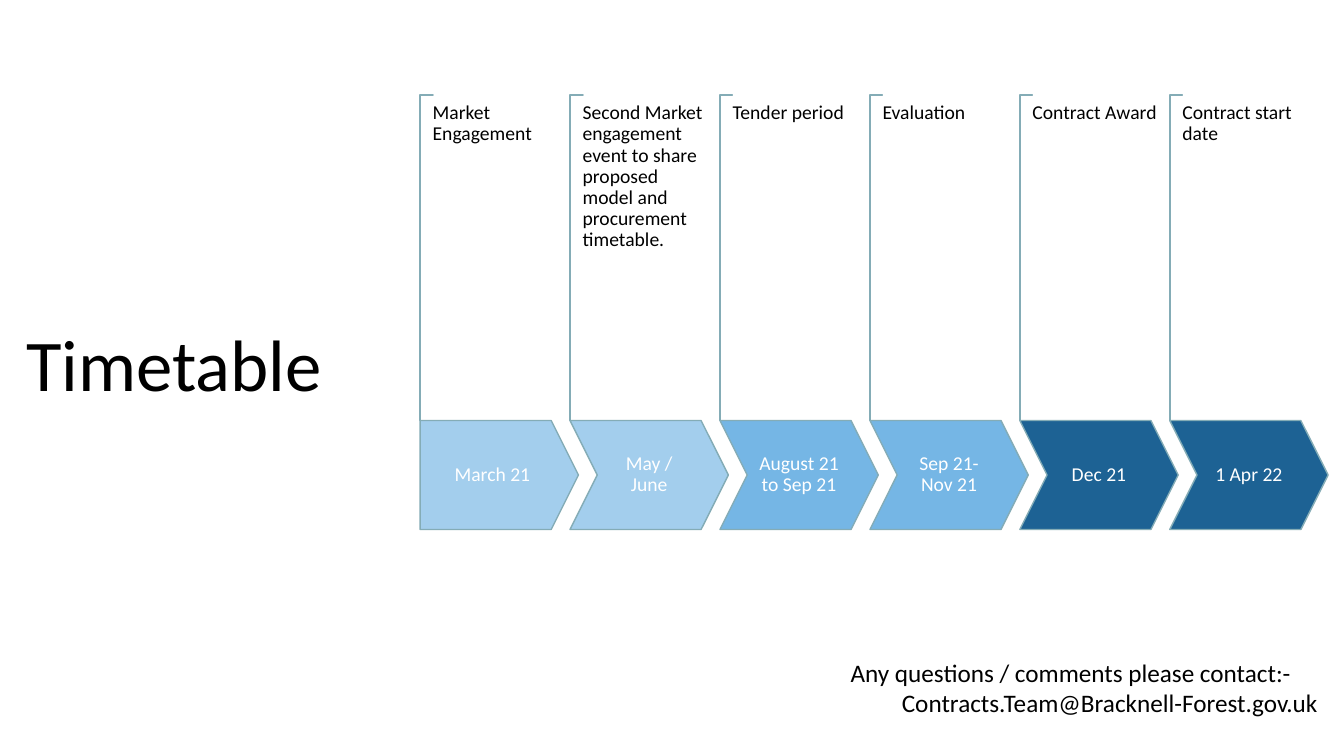
from pptx import Presentation
from pptx.dml.color import RGBColor
from pptx.enum import shapes, text
from pptx.util import Pt

BLACK = RGBColor(0x00, 0x00, 0x00)
WHITE = RGBColor(0xFF, 0xFF, 0xFF)
OUTLINE = RGBColor(0x84, 0xAC, 0xB6)
PALE = RGBColor(0xA3, 0xCE, 0xED)
MID = RGBColor(0x75, 0xB6, 0xE5)
DARK = RGBColor(0x1D, 0x62, 0x94)

FIRST_STAGE, STAGE_STEP = 300.1, 107.1
ARROW_TOP, ARROW_WIDTH, ARROW_HEIGHT = 300.4, 113.1, 77.8
BRACKET_LENGTH, BRACKET_DEPTH = 232.5, 9.1
STAGES = [
    ("March 21", "Market Engagement", PALE, 222),
    ("May / June", "Second Market engagement event to share proposed model "
     "and procurement timetable.", PALE, 222),
    ("August 21 to Sep 21", "Tender period", MID, 196),
    ("Sep 21-Nov 21", "Evaluation", MID, 196),
    ("Dec 21", "Contract Award", DARK, 196),
    ("1 Apr 22", "Contract start date", DARK, 196),
]


def add_words(paragraph, words, size, color, align=text.PP_ALIGN.LEFT,
              spacing=0.9, after=4.9):
    """Write one formatted run into a paragraph."""
    paragraph.alignment = align
    paragraph.line_spacing = spacing
    paragraph.space_before = Pt(0)
    paragraph.space_after = Pt(after)
    run = paragraph.add_run()
    run.text = words
    run.font.name = "Calibri"
    run.font.size = Pt(size)
    run.font.color.rgb = color


def set_frame(frame, anchor, side, edge):
    """Set wrapping, anchoring and insets of a text frame."""
    frame.word_wrap = True
    frame.auto_size = text.MSO_AUTO_SIZE.NONE
    frame.vertical_anchor = anchor
    frame.margin_left = frame.margin_right = Pt(side)
    frame.margin_top = frame.margin_bottom = Pt(edge)


def add_outlined(slide, kind, left, top, width, height, fill, adjustments):
    """Add a filled preset shape with the timeline's outline."""
    outlined = slide.shapes.add_shape(kind, Pt(left), Pt(top), Pt(width), Pt(height))
    outlined.shadow.inherit = False
    outlined.fill.solid()
    outlined.fill.fore_color.rgb = fill
    outlined.line.color.rgb = OUTLINE
    outlined.line.width = Pt(1)
    for index, value in enumerate(adjustments):
        outlined.adjustments[index] = value
    return outlined


def add_bracket(slide, left):
    """Add the thin corner that rises from an arrow to its description."""
    offset = (BRACKET_LENGTH - BRACKET_DEPTH) / 2
    bracket = add_outlined(slide, shapes.MSO_SHAPE.CORNER, left - offset,
                           ARROW_TOP - BRACKET_LENGTH + offset,
                           BRACKET_LENGTH, BRACKET_DEPTH, WHITE, (0.01, 0.01))
    bracket.rotation = 90


def add_arrow(slide, kind, left, date, fill):
    """Add a dated timeline arrow."""
    arrow = add_outlined(slide, kind, left, ARROW_TOP, ARROW_WIDTH, ARROW_HEIGHT,
                         fill, (0.25,))
    set_frame(arrow.text_frame, text.MSO_ANCHOR.MIDDLE, 7.2, 13.5)
    add_words(arrow.text_frame.paragraphs[0], date, 14, WHITE, text.PP_ALIGN.CENTER)


def add_description(slide, left, words, height):
    """Add the description beside a bracket."""
    description = slide.shapes.add_textbox(Pt(left + 9), Pt(73.4), Pt(91.4), Pt(height))
    set_frame(description.text_frame, text.MSO_ANCHOR.TOP, 0, 0)
    add_words(description.text_frame.paragraphs[0], words, 14, BLACK)


def add_title(slide):
    """Place and fill the title placeholder."""
    title = slide.shapes.title
    title.left, title.top, title.width, title.height = Pt(11.5), Pt(43.2), Pt(265.7), Pt(438.5)
    set_frame(title.text_frame, text.MSO_ANCHOR.MIDDLE, 7.2, 3.6)
    add_words(title.text_frame.paragraphs[0], "Timetable", 52, BLACK, after=6)


def add_contact(slide):
    """Add the contact lines at the foot of the slide."""
    contact = slide.shapes.add_textbox(Pt(600.5), Pt(465.8), Pt(347.8), Pt(51))
    frame = contact.text_frame
    set_frame(frame, text.MSO_ANCHOR.TOP, 7.2, 3.6)
    add_words(frame.paragraphs[0], "Any questions / comments please contact:-",
              18, BLACK, spacing=1.0, after=0)
    add_words(frame.add_paragraph(), "Contracts.Team@Bracknell-Forest.gov.uk",
              18, BLACK, text.PP_ALIGN.RIGHT, spacing=1.0, after=0)


def main():
    """Build the timetable slide."""
    deck = Presentation()
    deck.slide_width, deck.slide_height = Pt(960), Pt(540)
    slide = deck.slides.add_slide(deck.slide_layouts[5])
    add_title(slide)
    for index, (date, words, fill, height) in enumerate(STAGES):
        left = FIRST_STAGE + index * STAGE_STEP
        kind = shapes.MSO_SHAPE.CHEVRON if index else shapes.MSO_SHAPE.PENTAGON
        add_bracket(slide, left)
        add_arrow(slide, kind, left, date, fill)
        add_description(slide, left, words, height)
    add_contact(slide)
    deck.save("out.pptx")


if __name__ == "__main__":
    main()
